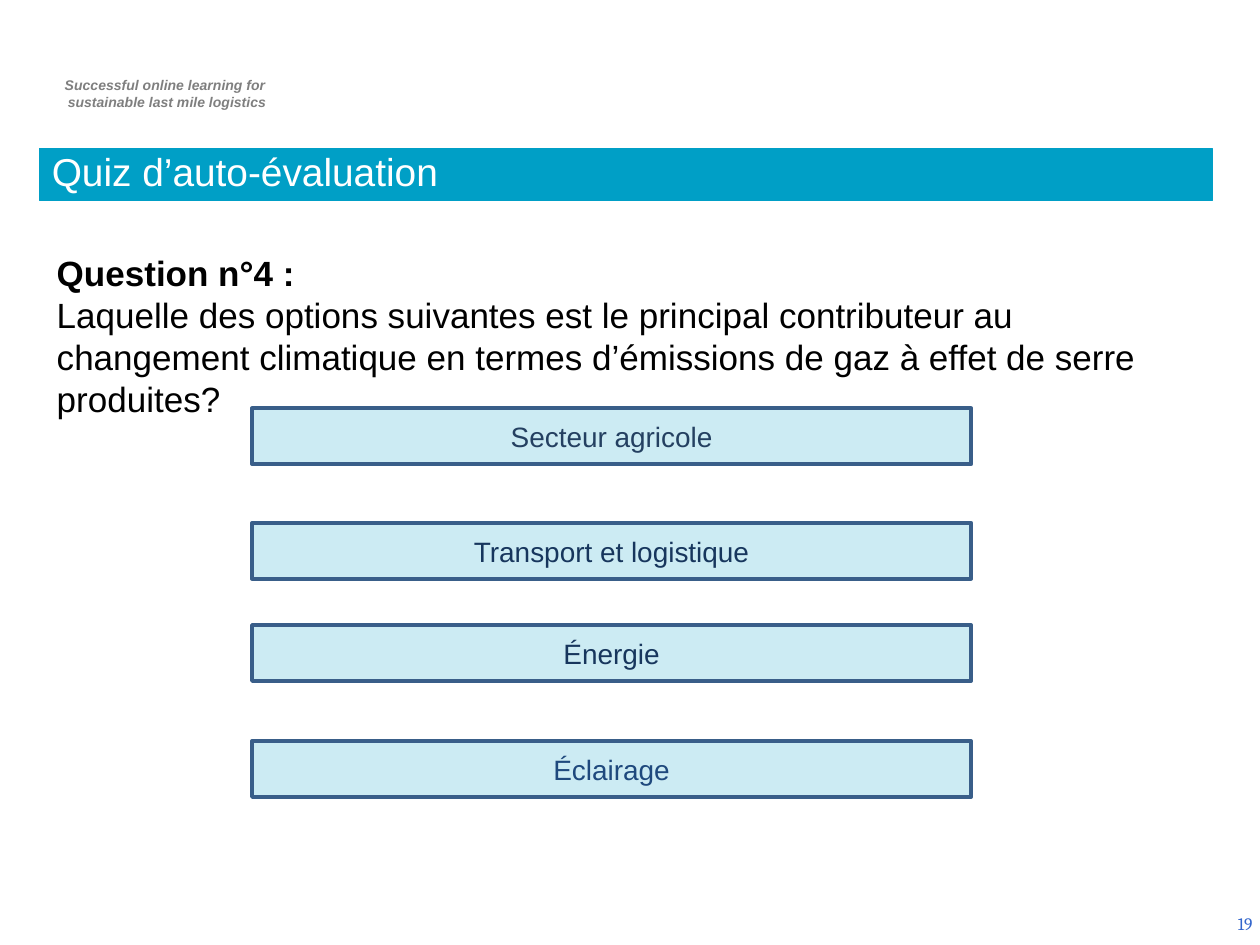
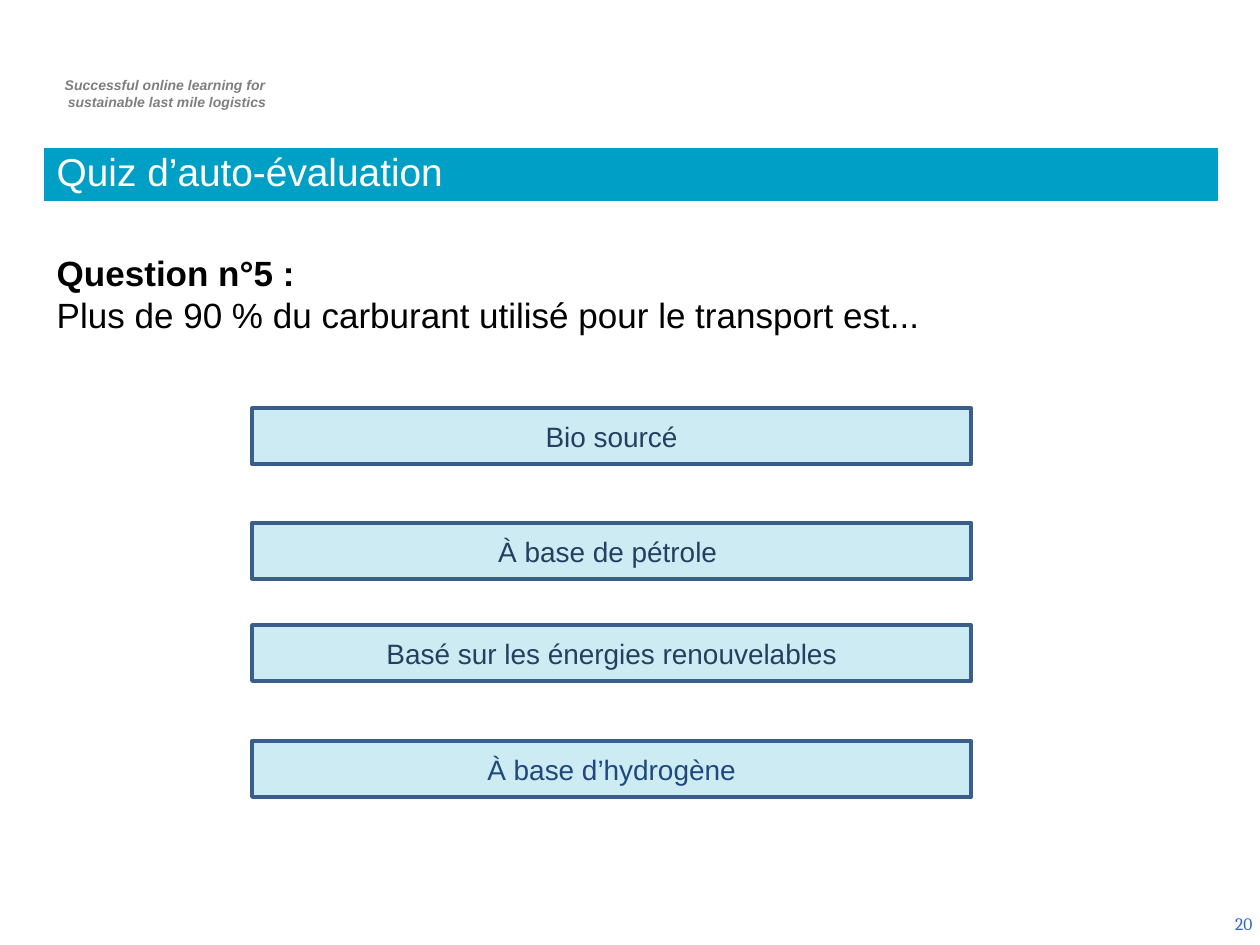
from dataclasses import dataclass

from lxml.etree import SubElement
from pptx import Presentation
from pptx.dml.color import RGBColor
from pptx.enum.shapes import MSO_SHAPE as Preset
from pptx.enum.text import MSO_ANCHOR as Anchor, MSO_AUTO_SIZE as AutoSize, PP_ALIGN as Align
from pptx.oxml.ns import qn
from pptx.util import Cm, Pt

SANS, SERIF = "Arial", "Cambria"
TEAL, OUTLINE, WHITE, BLACK = "009FC6", "395E89", "FFFFFF", "000000"
GREY, NUMBER_BLUE = "7F7F7F", "3366CC"
NAVY, SLATE, BLUE = "17365D", "244061", "1F497D"

TITLE = "Quiz d’auto-évaluation"
TAGLINE = ("Successful online learning for ", "sustainable last mile logistics")
FIRST_NUMBER = 19
CONTENT_WIDTH = 23.65
ANSWER_TOPS = (8.23, 10.54, 12.6, 14.94)


@dataclass
class Answer:
    text: str
    color: str


@dataclass
class Question:
    heading: str
    text: str
    answers: list[Answer]
    band_left: float
    height: float


QUESTIONS = [
    Question(
        "Question n°4 :",
        "Laquelle des options suivantes est le principal contributeur au changement "
        "climatique en termes d’émissions de gaz à effet de serre produites?",
        [
            Answer("Secteur agricole", SLATE),
            Answer("Transport et logistique", NAVY),
            Answer("Énergie", NAVY),
            Answer("Éclairage", BLUE),
        ],
        band_left=0.79,
        height=4.52,
    ),
    Question(
        "Question n°5 :",
        "Plus de 90 % du carburant utilisé pour le transport est...",
        [
            Answer("Bio sourcé", SLATE),
            Answer("À base de pétrole ", SLATE),
            Answer("Basé sur les énergies renouvelables", SLATE),
            Answer("À base d’hydrogène", BLUE),
        ],
        band_left=0.89,
        height=2.82,
    ),
]


def rgb(color: str) -> RGBColor:
    return RGBColor.from_string(color)


def place(shape, left: float, top: float, width: float, height: float) -> None:
    shape.left, shape.top = Cm(left), Cm(top)
    shape.width, shape.height = Cm(width), Cm(height)


def paint(shape, fill: str, line: str, line_width: float) -> None:
    shape.fill.solid()
    shape.fill.fore_color.rgb = rgb(fill)
    shape.line.color.rgb = rgb(line)
    shape.line.width = Pt(line_width)


def set_frame(shape, anchor: Anchor):
    """Give the shape's text a fixed, wrapping frame and return it."""
    frame = shape.text_frame
    frame.word_wrap = True
    frame.auto_size = AutoSize.NONE
    frame.vertical_anchor = anchor
    return frame


def set_indent(para, left: float, first: float) -> None:
    properties = para._p.get_or_add_pPr()
    properties.set("marL", str(Cm(left)))
    properties.set("indent", str(Cm(first)))


def style(para, size: float, color: str, align: Align, face: str = SANS,
          bold: bool = False, italic: bool = False) -> None:
    para.alignment = align
    para.space_before = Pt(0)
    font = para.font
    font.name, font.size = face, Pt(size)
    font.bold, font.italic = bold, italic
    font.color.rgb = rgb(color)


def add_tagline(page) -> None:
    box = page.shapes.add_textbox(Cm(0.74), Cm(1.42), Cm(5.16), Cm(0.94))
    frame = set_frame(box, Anchor.TOP)
    frame.text = "\n".join(TAGLINE)
    for para in frame.paragraphs:
        set_indent(para, 0.1, 0)
        style(para, 8, GREY, Align.CENTER, bold=True, italic=True)


def add_page_number(page, number: int) -> None:
    box = page.shapes.add_textbox(Cm(19.58), Cm(18.11), Cm(5.92), Cm(1.02))
    para = set_frame(box, Anchor.MIDDLE).paragraphs[0]
    field = SubElement(para._p, qn("a:fld"), type="slidenum",
                       id="{B6F15528-21DE-4FAA-801E-634DDDAF4B2B}")
    SubElement(field, qn("a:rPr"), lang="fr-FR")
    SubElement(field, qn("a:t")).text = str(number)
    style(para, 10, NUMBER_BLUE, Align.RIGHT, face=SERIF)


def set_title(page, left: float) -> None:
    band = page.shapes.title
    place(band, left, 3, CONTENT_WIDTH, 1.04)
    paint(band, TEAL, TEAL, 0.75)
    frame = set_frame(band, Anchor.BOTTOM)
    frame.text = TITLE
    para = frame.paragraphs[0]
    set_indent(para, 2.06, -2.06)
    para.line_spacing = 0.8
    style(para, 22.2, WHITE, Align.LEFT)


def set_question(page, question: Question) -> None:
    body = page.placeholders[1]
    place(body, 0.89, 4.95, CONTENT_WIDTH, question.height)
    frame = set_frame(body, Anchor.TOP)
    frame.text = f"{question.heading}\n{question.text}"
    for index, para in enumerate(frame.paragraphs):
        set_indent(para, 0, 0)
        SubElement(para._p.get_or_add_pPr(), qn("a:buNone"))
        style(para, 20, BLACK, Align.LEFT, bold=index == 0)


def add_answer(page, answer: Answer, top: float) -> None:
    button = page.shapes.add_shape(Preset.RECTANGLE, Cm(5.08), Cm(top), Cm(14.5), Cm(1.13))
    button.shadow.inherit = False
    paint(button, TEAL, OUTLINE, 2)
    fill_color = button.element.spPr.find(qn("a:solidFill")).find(qn("a:srgbClr"))
    SubElement(fill_color, qn("a:alpha"), val="20000")
    frame = set_frame(button, Anchor.MIDDLE)
    frame.text = answer.text
    style(frame.paragraphs[0], 16, answer.color, Align.CENTER)


def main() -> None:
    deck = Presentation()
    deck.slide_width, deck.slide_height = Cm(25.4), Cm(19.05)
    deck.element.set("firstSlideNum", str(FIRST_NUMBER))
    for number, question in enumerate(QUESTIONS, FIRST_NUMBER):
        page = deck.slides.add_slide(deck.slide_layouts[1])
        add_tagline(page)
        add_page_number(page, number)
        set_title(page, question.band_left)
        set_question(page, question)
        for answer, top in zip(question.answers, ANSWER_TOPS):
            add_answer(page, answer, top)
    deck.save("out.pptx")


if __name__ == "__main__":
    main()
